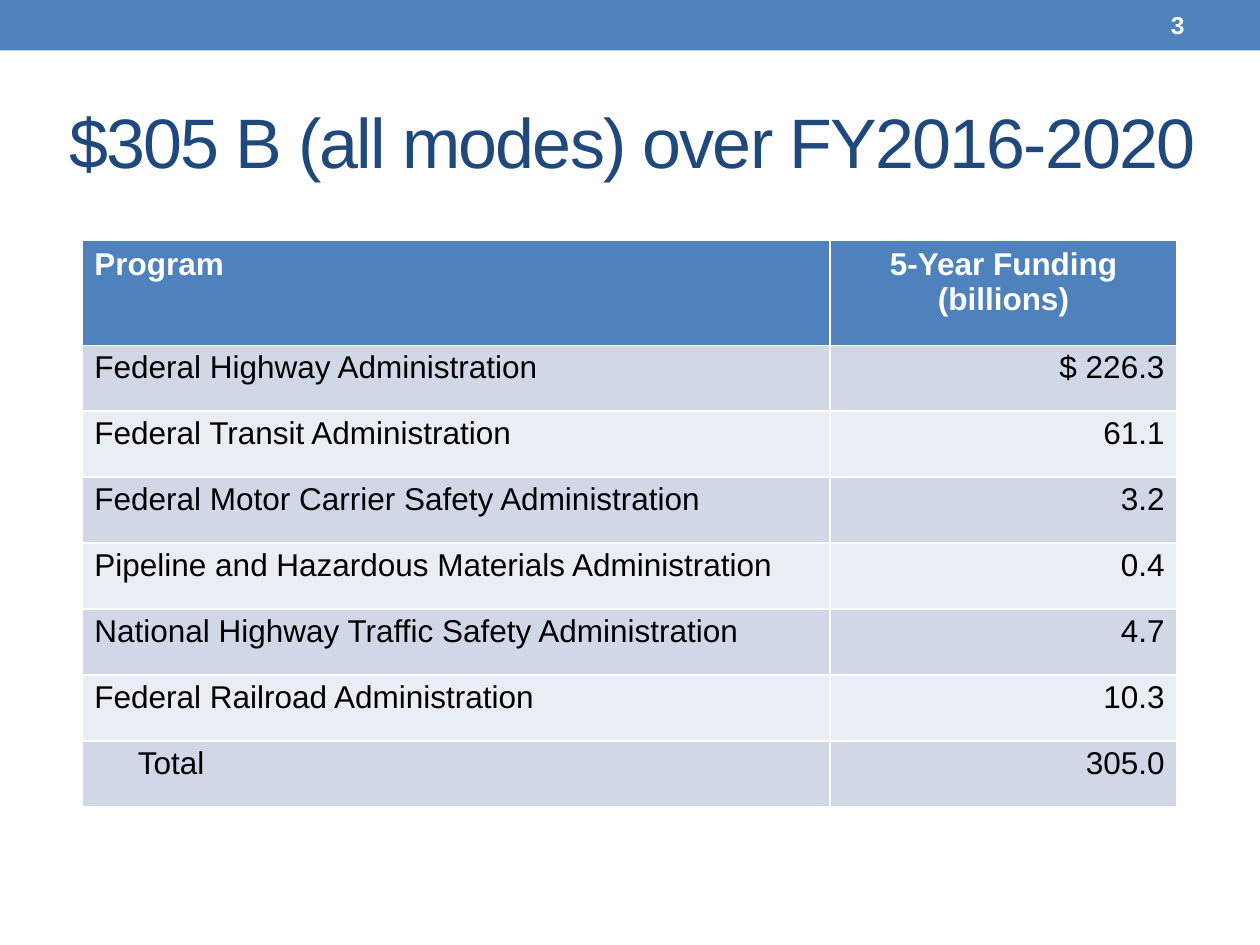
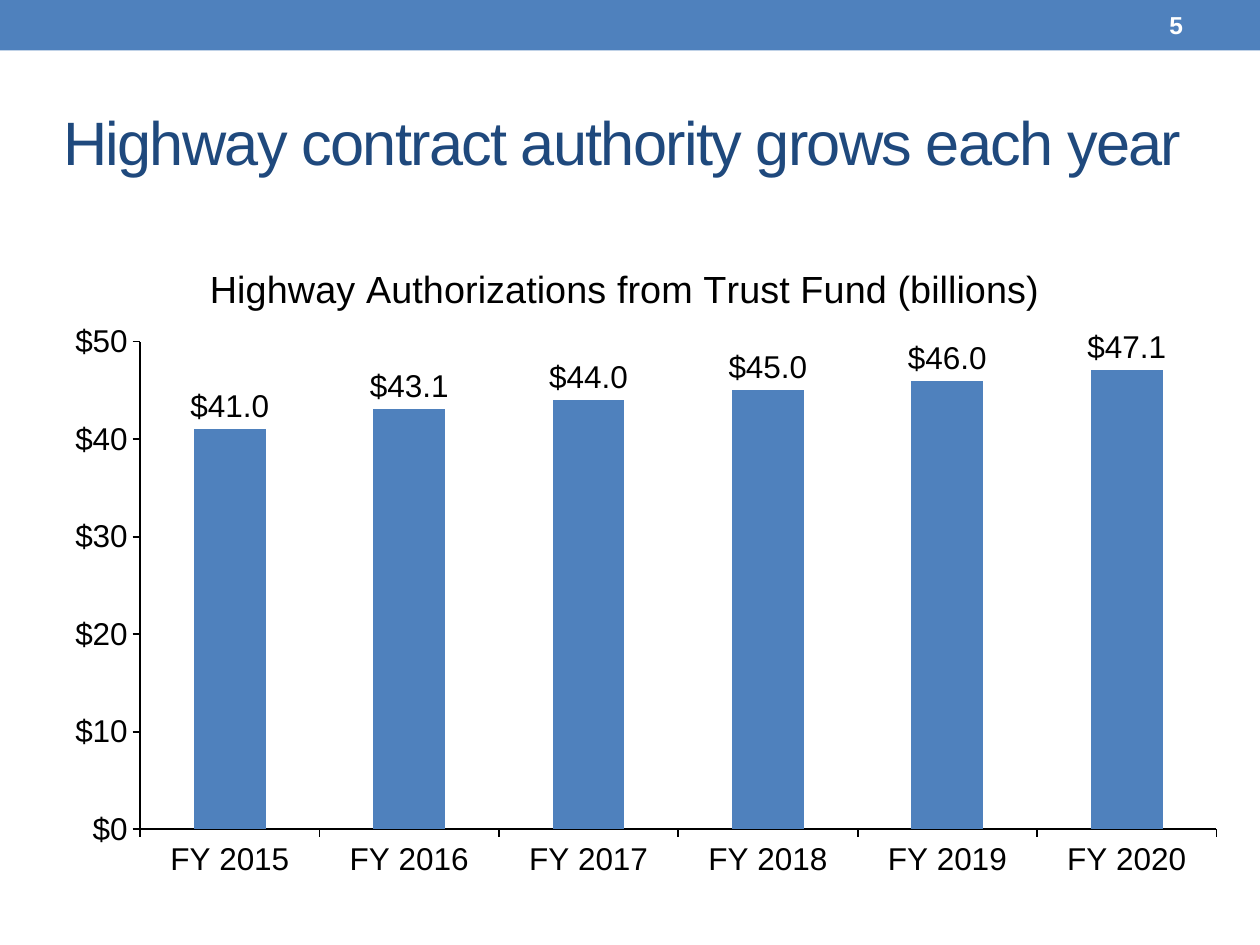
from dataclasses import dataclass

from lxml import etree
from pptx import Presentation
from pptx import util as u
from pptx.chart import data as chart_data
from pptx.dml.color import RGBColor
from pptx.enum import chart as charts, shapes, text
from pptx.oxml import ns

Cm, Pt = u.Cm, u.Pt


@dataclass(frozen=True)
class Theme:
    font: str = "Arial"
    accent: str = "4F81BD"
    title: str = "1F497D"
    ink: str = "000000"
    paper: str = "FFFFFF"
    row_bands: tuple = ("D0D8E8", "E9EDF4")
    number_size: float = 14
    body_size: float = 18
    chart_title_size: float = 21.6


class Deck:
    def __init__(self, theme):
        self.theme = theme
        self.presentation = Presentation()
        self.presentation.slide_width = Cm(25.4)
        self.presentation.slide_height = Cm(19.05)
        self.slide = None

    def style(self, font, size, color=None, bold=False):
        font.name = self.theme.font
        font.size = Pt(size)
        font.bold = bold
        font.color.rgb = RGBColor.from_string(color or self.theme.ink)

    def paint(self, fill, color):
        fill.solid()
        fill.fore_color.rgb = RGBColor.from_string(color)

    def start_slide(self, title, title_size, title_box, number, number_right):
        """Add a slide with its band, page number and title."""
        layout = self.presentation.slide_layouts[5]
        self.slide = self.presentation.slides.add_slide(layout)
        self.band()
        self.page_number(number, number_right)
        self.title(title, title_size, title_box)

    def band(self):
        band = self.slide.shapes.add_shape(
            shapes.MSO_SHAPE.RECTANGLE, 0, 0, self.presentation.slide_width, Cm(1.02))
        band.shadow.inherit = False
        self.paint(band.fill, self.theme.accent)
        band.line.fill.background()

    def page_number(self, number, right):
        width = Cm(2.7)
        box = self.slide.shapes.add_textbox(right - width, Cm(0.05), width, Cm(0.91))
        frame = box.text_frame
        frame.word_wrap = True
        frame.vertical_anchor = text.MSO_ANCHOR.MIDDLE
        frame.margin_left = frame.margin_right = 0
        frame.margin_top = frame.margin_bottom = 0
        paragraph = frame.paragraphs[0]
        paragraph.text = str(number)
        paragraph.alignment = text.PP_ALIGN.RIGHT
        self.style(paragraph.font, self.theme.number_size, self.theme.paper, bold=True)

    def title(self, wording, size, box):
        shape = self.slide.shapes.title
        shape.left, shape.top, shape.width, shape.height = box
        frame = shape.text_frame
        frame.text = wording
        frame.word_wrap = True
        frame.auto_size = text.MSO_AUTO_SIZE.NONE
        frame.vertical_anchor = text.MSO_ANCHOR.MIDDLE
        paragraph = frame.paragraphs[0]
        paragraph.alignment = text.PP_ALIGN.LEFT
        self.style(paragraph.font, size, self.theme.title)
        paragraph.font._element.set("spc", "-100")

    def cell(self, cell, wording, fill, color, alignment, bold=False):
        cell.text = wording
        self.paint(cell.fill, fill)
        for paragraph in cell.text_frame.paragraphs:
            paragraph.alignment = alignment
            self.style(paragraph.font, self.theme.body_size, color, bold)

    def table(self, left, top, column_widths, header_height, row_height, header, rows):
        """Add a two-column table: labels at the left, amounts at the right."""
        theme, align = self.theme, text.PP_ALIGN
        table = self.slide.shapes.add_table(
            len(rows) + 1, len(header), left, top, sum(column_widths),
            header_height + row_height * len(rows)).table
        for column, width in zip(table.columns, column_widths):
            column.width = width
        for row in table.rows:
            row.height = row_height
        table.rows[0].height = header_height

        for column, (wording, alignment) in enumerate(zip(header, (align.LEFT, align.CENTER))):
            self.cell(table.cell(0, column), wording, theme.accent, theme.paper,
                      alignment, bold=True)
        for index, row in enumerate(rows):
            fill = theme.row_bands[index % 2]
            for column, (wording, alignment) in enumerate(zip(row, (align.LEFT, align.RIGHT))):
                cell = table.cell(index + 1, column)
                self.cell(cell, wording, fill, theme.ink, alignment)
                cell.margin_top, cell.margin_bottom = Cm(0.1), Cm(0.05)
        return table

    def place(self, element, index, **fractions):
        """Fix a chart part's position, in fractions of the chart area."""
        layout = element.find(ns.qn("c:layout"))
        if layout is not None:
            element.remove(layout)
        layout = etree.Element(ns.qn("c:layout"))
        manual = etree.SubElement(layout, ns.qn("c:manualLayout"))
        settings = {"xMode": "edge", "yMode": "edge", **fractions}
        if "w" in fractions:
            settings = {"layoutTarget": "inner", **settings}
        for name, value in settings.items():
            etree.SubElement(manual, ns.qn(f"c:{name}")).set("val", str(value))
        element.insert(index, layout)

    def axis(self, axis):
        axis.has_major_gridlines = False
        axis.major_tick_mark = charts.XL_TICK_MARK.OUTSIDE
        axis.minor_tick_mark = charts.XL_TICK_MARK.NONE
        self.style(axis.tick_labels.font, self.theme.body_size)
        axis.format.line.width = Pt(1)
        axis.format.line.color.rgb = RGBColor.from_string(self.theme.ink)

    def column_chart(self, box, title, categories, values, maximum, step):
        data = chart_data.CategoryChartData()
        data.categories = categories
        data.add_series("Series 1", values)
        chart = self.slide.shapes.add_chart(
            charts.XL_CHART_TYPE.COLUMN_CLUSTERED, *box, data).chart
        chart.has_legend = False
        chart.has_title = True
        paragraph = chart.chart_title.text_frame.paragraphs[0]
        paragraph.text = title
        self.style(paragraph.font, self.theme.chart_title_size)
        self.place(chart.chart_title._element, 1, x=0.13, y=0.07)
        plot_area = chart._chartSpace.find(".//" + ns.qn("c:plotArea"))
        self.place(plot_area, 0, x=0.076, y=0.192, w=0.924, h=0.708)

        self.axis(chart.category_axis)
        chart.category_axis.tick_label_position = charts.XL_TICK_LABEL_POSITION.LOW
        value_axis = chart.value_axis
        self.axis(value_axis)
        value_axis.minimum_scale, value_axis.maximum_scale = 0, maximum
        value_axis.major_unit = step
        value_axis.tick_labels.number_format = '"$"#,##0'
        value_axis.tick_labels.number_format_is_linked = False

        plot = chart.plots[0]
        plot.gap_width = 150
        plot.vary_by_categories = False
        self.paint(plot.series[0].format.fill, self.theme.accent)
        labels = plot.series[0].data_labels
        labels.show_value = True
        labels.position = charts.XL_LABEL_POSITION.OUTSIDE_END
        labels.number_format = '"$"#,##0.0'
        labels.number_format_is_linked = False
        self.style(labels.font, self.theme.body_size)


def funding_slide(deck):
    deck.start_slide("$305 B (all modes) over FY2016-2020", 40,
                     (Cm(1.14), Cm(1.47), Cm(23.57), Cm(2.74)), 3, Cm(23.88))
    programs = [
        ("Federal Highway Administration", "$ 226.3"),
        ("Federal Transit Administration", "61.1"),
        ("Federal Motor Carrier Safety Administration", "3.2"),
        ("Pipeline and Hazardous Materials Administration", "0.4"),
        ("National Highway Traffic Safety Administration", "4.7"),
        ("Federal Railroad Administration", "10.3"),
        ("Total", "305.0"),
    ]
    table = deck.table(Cm(1.65), Cm(4.85), (Cm(15.08), Cm(7)), Cm(2.11), Cm(1.33),
                       ("Program", "5-Year Funding\n(billions)"), programs)
    table.cell(len(programs), 0).margin_left = Cm(1.13)


def highway_slide(deck):
    deck.start_slide("Highway contract authority grows each year", 35,
                     (Cm(1.02), Cm(1.47), Cm(23.95), Cm(2.74)), 5, Cm(23.85))
    deck.column_chart((Cm(1.04), Cm(4.22), Cm(23.5), Cm(13.89)),
                      "Highway Authorizations from Trust Fund (billions)",
                      [f"FY {year}" for year in range(2015, 2021)],
                      (41, 43.1, 44, 45, 46, 47.1), maximum=50, step=10)


def main():
    deck = Deck(Theme())
    funding_slide(deck)
    highway_slide(deck)
    deck.presentation.save("out.pptx")


if __name__ == "__main__":
    main()
